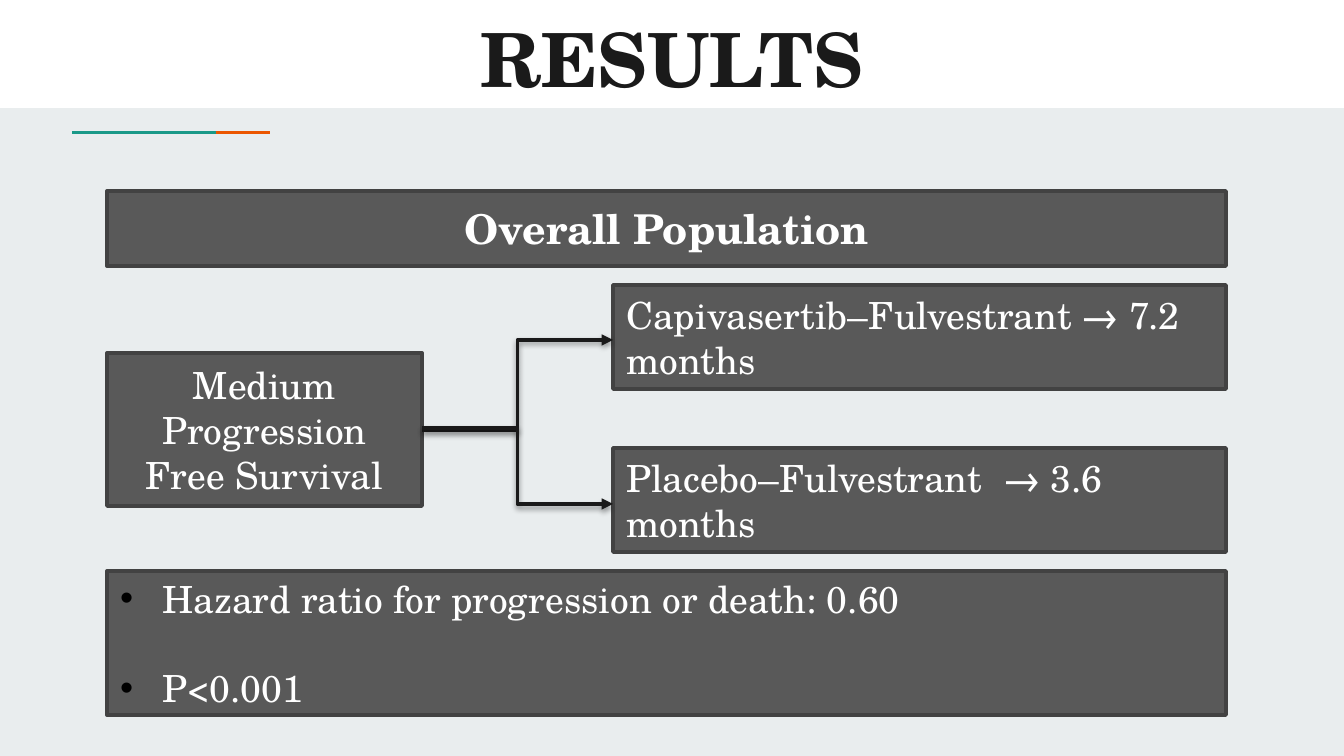
from lxml.etree import SubElement
from pptx import Presentation
from pptx.dml.color import RGBColor
from pptx.enum.shapes import MSO_CONNECTOR, MSO_SHAPE
from pptx.enum.text import MSO_ANCHOR as ANCHOR, PP_ALIGN as ALIGN
from pptx.oxml import parse_xml
from pptx.oxml.ns import nsdecls, qn
from pptx.util import Pt

PX = 914400 / 134.4
FONT = "TeX Gyre Schola"
WHITE = RGBColor(0xFF, 0xFF, 0xFF)
BACKGROUND = RGBColor(0xE9, 0xED, 0xEE)
INK = RGBColor(0x1A, 0x1A, 0x1A)
BOX_FILL = RGBColor(0x59, 0x59, 0x59)
BOX_LINE = RGBColor(0x42, 0x42, 0x42)
ORANGE = RGBColor(0xEB, 0x56, 0x00)
TEAL = RGBColor(0x1A, 0x99, 0x88)


def add_box(bounds, fill, line=None):
    shape = slide.shapes.add_shape(MSO_SHAPE.RECTANGLE, *[round(v * PX) for v in bounds])
    shape.shadow.inherit = False
    shape.fill.solid()
    shape.fill.fore_color.rgb = fill
    if line is None:
        shape.line.fill.background()
    else:
        shape.line.color.rgb = line
        shape.line.width = Pt(2)
    return shape


def add_run(paragraph, text, size, color, bold=False):
    run = paragraph.add_run()
    run.text = text
    run.font.name = FONT
    run.font.size = Pt(size)
    run.font.bold = bold
    run.font.color.rgb = color


presentation = Presentation()
presentation.slide_width = round(1344 * PX)
presentation.slide_height = round(756 * PX)
slide = presentation.slides.add_slide(presentation.slide_layouts[6])
slide.background.fill.solid()
slide.background.fill.fore_color.rgb = BACKGROUND

add_box((0, 0, 1344, 108), WHITE)
add_box((128, 131, 142, 3), ORANGE)
add_box((72, 131, 144, 3), TEAL)

title = slide.shapes.add_textbox(*[round(v * PX) for v in (107, 0, 1130, 121)])
frame = title.text_frame
frame.word_wrap = True
frame.margin_top = frame.margin_bottom = round(13 * PX)
paragraph = frame.paragraphs[0]
paragraph.alignment = ALIGN.CENTER
add_run(paragraph, "RESULTS", 40, INK, True)

boxes = [
    ((107, 191, 1119, 75), ["Overall Population"], ALIGN.CENTER, 22),
    ((107, 353, 315, 153), ["Medium Progression Free Survival"], ALIGN.CENTER, 20),
    ((613, 285, 613, 104), ["Capivasertib–Fulvestrant → 7.2 months"], ALIGN.LEFT, 20),
    ((613, 448, 613, 104), ["Placebo–Fulvestrant  → 3.6 months"], ALIGN.LEFT, 20),
    ((107, 571, 1119, 144), ["Hazard ratio for progression or death: 0.60", "P<0.001"], ALIGN.LEFT, 20),
]
for bounds, texts, alignment, size in boxes:
    frame = add_box(bounds, BOX_FILL, BOX_LINE).text_frame
    frame.word_wrap = True
    frame.vertical_anchor = ANCHOR.MIDDLE
    for index, text in enumerate(texts):
        paragraph = frame.paragraphs[0] if index == 0 else frame.add_paragraph()
        paragraph.alignment = alignment
        if index > 0:
            paragraph.space_before = Pt(24)
        add_run(paragraph, text, size, WHITE, size == 22)
        if len(texts) > 1:
            properties = paragraph._p.get_or_add_pPr()
            properties.set("marL", str(round(42 * PX)))
            properties.set("indent", str(round(-42 * PX)))
            bullet_color = SubElement(properties, qn("a:buClr"))
            SubElement(bullet_color, qn("a:srgbClr"), val="000000")
            SubElement(properties, qn("a:buFont"), typeface="Arial")
            SubElement(properties, qn("a:buChar"), char="•")

for start_y, end_y in ((430, 340), (428, 504)):
    ends = [round(v * PX) for v in (422, start_y, 613, end_y)]
    connector = slide.shapes.add_connector(MSO_CONNECTOR.ELBOW, *ends)
    connector.line.color.rgb = INK
    connector.line.width = Pt(2)
    SubElement(connector.line._get_or_add_ln(), qn("a:tailEnd"), type="triangle")
    connector._element.spPr.append(parse_xml(
        f'<a:effectLst {nsdecls("a")}>'
        f'<a:outerShdw blurRad="{Pt(3.1)}" dist="{Pt(1.6)}" dir="5400000" rotWithShape="0">'
        '<a:srgbClr val="000000"><a:alpha val="38000"/></a:srgbClr>'
        '</a:outerShdw></a:effectLst>'))

presentation.save("out.pptx")
